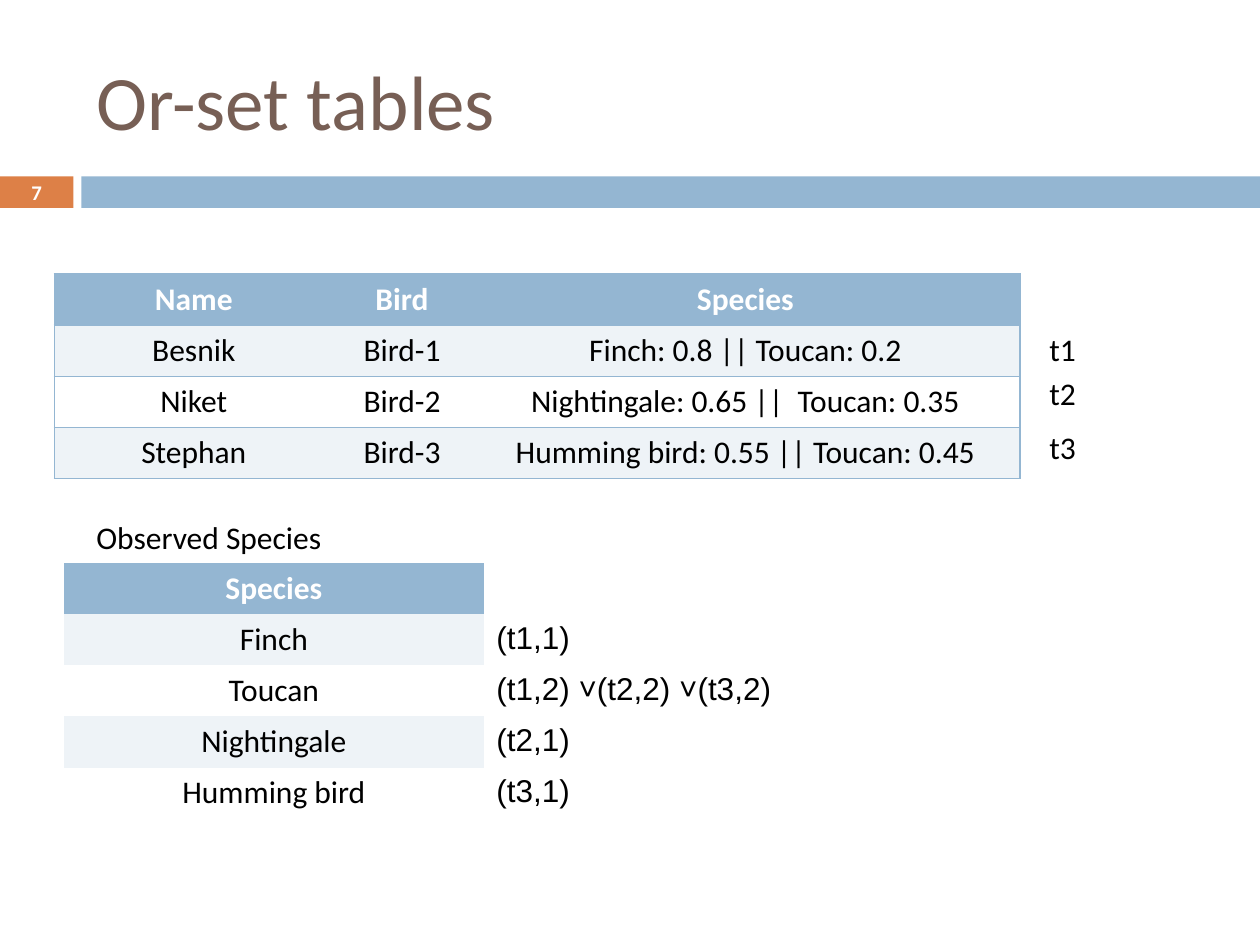
from dataclasses import dataclass

from lxml import etree
from pptx import Presentation
from pptx.dml.color import RGBColor
from pptx.enum import shapes, text
from pptx.oxml import ns
from pptx.util import Pt

COLORS = {
    "blue": "94B6D2",
    "orange": "DD8047",
    "brown": "775F55",
    "band": "EEF3F7",
    "white": "FFFFFF",
    "black": "000000",
}
PLAIN_TABLE_STYLE = "{2D5ABB26-0587-4C30-8999-92F81FD0307C}"
ROW_HEIGHT = 29.2
HEADER_FONT = {"size": Pt(18), "name": "Calibri", "bold": True}
BODY_FONT = {"size": Pt(18), "name": "Calibri", "bold": False}
LINEAGE_FONT = {"size": Pt(18), "name": "Arial", "bold": False}


@dataclass
class Bar:
    left: float
    width: float
    color: str


@dataclass
class Label:
    words: str
    left: float
    top: float
    width: float
    height: float = 29


@dataclass
class Grid:
    left: float
    top: float
    widths: list[float]
    rows: list[list[str]]
    bordered: bool = False
    lineage_column: int | None = None


BARS = [Bar(0, 42, "orange"), Bar(46.5, 673.5, "blue")]

LABELS = [
    Label("t1", 592.5, 185, 34),
    Label("t2", 592.5, 210.3, 34),
    Label("t3", 592.5, 241, 34),
    Label("Observed Species", 48, 292.5, 215),
]

SIGHTINGS = Grid(31, 156.6, [159.5, 78.5, 314], [
    ["Name", "Bird", "Species"],
    ["Besnik", "Bird-1", "Finch: 0.8 || Toucan: 0.2"],
    ["Niket", "Bird-2", "Nightingale: 0.65 ||  Toucan: 0.35"],
    ["Stephan", "Bird-3", "Humming bird: 0.55 || Toucan: 0.45"],
], bordered=True)

OBSERVED = Grid(36.5, 321.8, [240, 240], [
    ["Species", ""],
    ["Finch", "(t1,1)"],
    ["Toucan", "(t1,2) ˅(t2,2) ˅(t3,2)"],
    ["Nightingale", "(t2,1)"],
    ["Humming bird", "(t3,1)"],
], lineage_column=1)


def rgb(name: str) -> RGBColor:
    return RGBColor.from_string(COLORS[name])


def write(frame, words: str, formats: dict, color: str, alignment=text.PP_ALIGN.LEFT) -> None:
    paragraph = frame.paragraphs[0]
    paragraph.alignment = alignment
    run = paragraph.add_run()
    run.text = words
    for attribute, value in formats.items():
        setattr(run.font, attribute, value)
    run.font.color.rgb = rgb(color)


def add_bar(slide, bar: Bar) -> None:
    shape = slide.shapes.add_shape(
        shapes.MSO_SHAPE.RECTANGLE, Pt(bar.left), Pt(100.8), Pt(bar.width), Pt(18))
    shape.shadow.inherit = False
    shape.fill.solid()
    shape.fill.fore_color.rgb = rgb(bar.color)
    shape.line.fill.background()


def add_label(slide, label: Label, formats: dict = BODY_FONT, color: str = "black",
              alignment=text.PP_ALIGN.LEFT):
    box = slide.shapes.add_textbox(
        Pt(label.left), Pt(label.top), Pt(label.width), Pt(label.height))
    box.text_frame.word_wrap = True
    write(box.text_frame, label.words, formats, color, alignment)
    return box


def add_borders(cell, sides: str) -> None:
    """Draw thin blue lines on the given sides, listed in the order L, R, T, B."""
    properties = cell._tc.get_or_add_tcPr()
    for side in sides:
        line = etree.SubElement(properties, ns.qn(f"a:ln{side}"), w=str(Pt(1)))
        fill = etree.SubElement(line, ns.qn("a:solidFill"))
        etree.SubElement(fill, ns.qn("a:srgbClr"), val=COLORS["blue"])


def add_grid(slide, grid: Grid) -> None:
    frame = slide.shapes.add_table(
        len(grid.rows), len(grid.widths), Pt(grid.left), Pt(grid.top),
        Pt(sum(grid.widths)), Pt(ROW_HEIGHT * len(grid.rows)))
    table = frame.table
    table._tbl.tblPr.find(ns.qn("a:tableStyleId")).text = PLAIN_TABLE_STYLE
    table.first_row = table.horz_banding = False
    for column, width in zip(table.columns, grid.widths):
        column.width = Pt(width)
    last_column = len(grid.widths) - 1
    for row_index, row in enumerate(grid.rows):
        table.rows[row_index].height = Pt(ROW_HEIGHT)
        header = row_index == 0
        fill = "blue" if header else "band" if row_index % 2 else "white"
        for column_index, words in enumerate(row):
            cell = table.cell(row_index, column_index)
            if grid.bordered:
                left = "L" if column_index == 0 else ""
                right = "R" if column_index == last_column else ""
                add_borders(cell, left + right + "TB")
            if column_index == grid.lineage_column:
                cell.fill.background()
                if words:
                    write(cell.text_frame, words, LINEAGE_FONT, "black")
                continue
            cell.fill.solid()
            cell.fill.fore_color.rgb = rgb(fill)
            write(cell.text_frame, words, HEADER_FONT if header else BODY_FONT,
                  "white" if header else "black", text.PP_ALIGN.CENTER)


def add_title(slide, words: str) -> None:
    title = slide.shapes.title
    position = {"left": Pt(48), "top": Pt(18), "width": Pt(642), "height": Pt(78)}
    for attribute, value in position.items():
        setattr(title, attribute, value)
    title.text_frame.vertical_anchor = text.MSO_ANCHOR.MIDDLE
    write(title.text_frame, words, {"size": Pt(44), "name": "Calibri"}, "brown")


def add_slide_number(slide, number: str) -> None:
    box = add_label(slide, Label(number, 0, 100, 42, 19.5), HEADER_FONT | {"size": Pt(11.9)},
                    "white", text.PP_ALIGN.CENTER)
    frame = box.text_frame
    frame.vertical_anchor = text.MSO_ANCHOR.MIDDLE
    frame.margin_top = frame.margin_bottom = 0


def main() -> None:
    presentation = Presentation()
    presentation.slide_width, presentation.slide_height = Pt(720), Pt(540)
    slide = presentation.slides.add_slide(presentation.slide_layouts.get_by_name("Title Only"))
    for bar in BARS:
        add_bar(slide, bar)
    add_title(slide, "Or-set tables")
    add_slide_number(slide, "7")
    add_grid(slide, SIGHTINGS)
    for label in LABELS:
        add_label(slide, label)
    add_grid(slide, OBSERVED)
    presentation.save("out.pptx")


if __name__ == "__main__":
    main()
